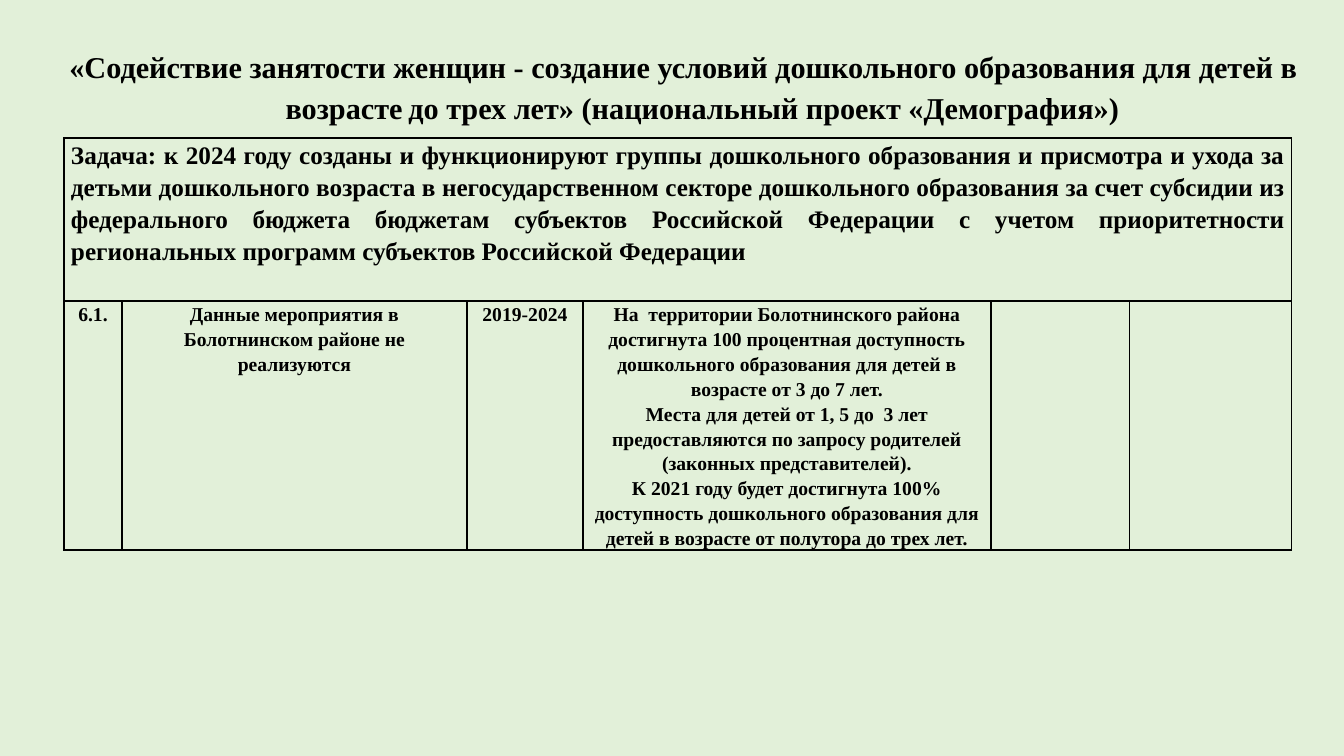
from dataclasses import dataclass

from lxml import etree
from pptx import Presentation
from pptx import util as u
from pptx.dml.color import RGBColor
from pptx.enum import text
from pptx.oxml.ns import qn

EMU_PER_PX = 12192000 / 1344


@dataclass(frozen=True)
class Theme:
    background: str = "E2F0D9"
    ink: str = "000000"
    font: str = "Times New Roman"
    gap_font: str = "Calibri"
    title_size: float = 21.6
    gap_size: float = 18
    task_size: float = 18
    body_size: float = 14
    line_spacing: float = 1.15
    border_width: float = 1


@dataclass(frozen=True)
class Column:
    width: int
    paragraphs: tuple[str, ...] = ()


THEME = Theme()
TITLE_START = "«Содействие занятости женщин - создание условий дошкольного образования для детей в возрасте"
TITLE_END = "до трех лет» (национальный проект «Демография»)"
TASK = (
    "Задача: к 2024 году созданы и функционируют группы дошкольного образования "
    "и присмотра и ухода за детьми дошкольного возраста в негосударственном секторе "
    "дошкольного образования за счет субсидии из федерального бюджета бюджетам "
    "субъектов Российской Федерации с учетом приоритетности региональных программ "
    "субъектов Российской Федерации"
)
COLUMNS = (
    Column(58, ("6.1.",)),
    Column(345, ("Данные мероприятия в Болотнинском районе не реализуются",)),
    Column(116, ("2019-2024",)),
    Column(408, (
        "На  территории Болотнинского района достигнута 100 процентная доступность "
        "дошкольного образования для детей в возрасте от 3 до 7 лет.",
        "Места для детей от 1, 5 до  3 лет предоставляются по запросу родителей "
        "(законных представителей).",
        "К 2021 году будет достигнута 100% доступность дошкольного образования "
        "для детей в возрасте от полутора до трех лет.",
    )),
    Column(139),
    Column(162),
)
ROW_HEIGHTS = (163, 249)


def px(length: int) -> u.Emu:
    return u.Emu(round(length * EMU_PER_PX))


def add_text(paragraph, content: str, *, size: float, font: str = THEME.font,
             bold: bool = True, align=text.PP_ALIGN.CENTER) -> None:
    paragraph.alignment = align
    paragraph.line_spacing = THEME.line_spacing
    run = paragraph.add_run()
    run.text = content
    run.font.name = font
    run.font.size = u.Pt(size)
    run.font.bold = bold
    run.font.color.rgb = RGBColor.from_string(THEME.ink)


def add_title(slide) -> None:
    title = slide.shapes.title
    title.left, title.top, title.width, title.height = map(px, (41, 42, 1285, 89))
    frame = title.text_frame
    frame.word_wrap = True
    frame.auto_size = text.MSO_AUTO_SIZE.NONE
    frame.vertical_anchor = text.MSO_ANCHOR.BOTTOM
    paragraph = frame.paragraphs[0]
    add_text(paragraph, TITLE_START, size=THEME.title_size)
    add_text(paragraph, " ", size=THEME.gap_size, font=THEME.gap_font, bold=False)
    add_text(paragraph, TITLE_END, size=THEME.title_size)
    properties = paragraph._p.get_or_add_pPr()
    properties.set("marL", str(px(38)))
    properties.set("indent", str(-px(38)))


def format_cell(cell) -> None:
    cell.margin_left = cell.margin_right = px(7)
    cell.margin_top = cell.margin_bottom = 0
    properties = cell._tc.get_or_add_tcPr()
    for side in ("lnL", "lnR", "lnT", "lnB"):
        line = etree.SubElement(properties, qn(f"a:{side}"), w=str(u.Pt(THEME.border_width)))
        fill = etree.SubElement(line, qn("a:solidFill"))
        etree.SubElement(fill, qn("a:srgbClr"), val=THEME.ink)
    cell.fill.background()


def fill_cell(cell, paragraphs: tuple[str, ...], size: float,
              align=text.PP_ALIGN.CENTER) -> None:
    frame = cell.text_frame
    for index, content in enumerate(paragraphs):
        paragraph = frame.add_paragraph() if index else frame.paragraphs[0]
        add_text(paragraph, content, size=size, align=align)


def add_task_table(slide) -> None:
    width = sum(column.width for column in COLUMNS)
    frame = slide.shapes.add_table(len(ROW_HEIGHTS), len(COLUMNS), px(64), px(138),
                                   px(width), px(sum(ROW_HEIGHTS)))
    table = frame.table
    table.first_row = table.horz_banding = False
    for row, height in zip(table.rows, ROW_HEIGHTS):
        row.height = px(height)
    for cell in table.iter_cells():
        format_cell(cell)
    table.cell(0, 0).merge(table.cell(0, len(COLUMNS) - 1))
    fill_cell(table.cell(0, 0), (TASK,), THEME.task_size, text.PP_ALIGN.JUSTIFY)
    for index, column in enumerate(COLUMNS):
        table.columns[index].width = px(column.width)
        fill_cell(table.cell(1, index), column.paragraphs, THEME.body_size)


def main() -> None:
    presentation = Presentation()
    presentation.slide_width, presentation.slide_height = px(1344), px(756)
    slide = presentation.slides.add_slide(presentation.slide_layouts[5])
    background = slide.background.fill
    background.solid()
    background.fore_color.rgb = RGBColor.from_string(THEME.background)
    add_title(slide)
    add_task_table(slide)
    presentation.save("out.pptx")


if __name__ == "__main__":
    main()
